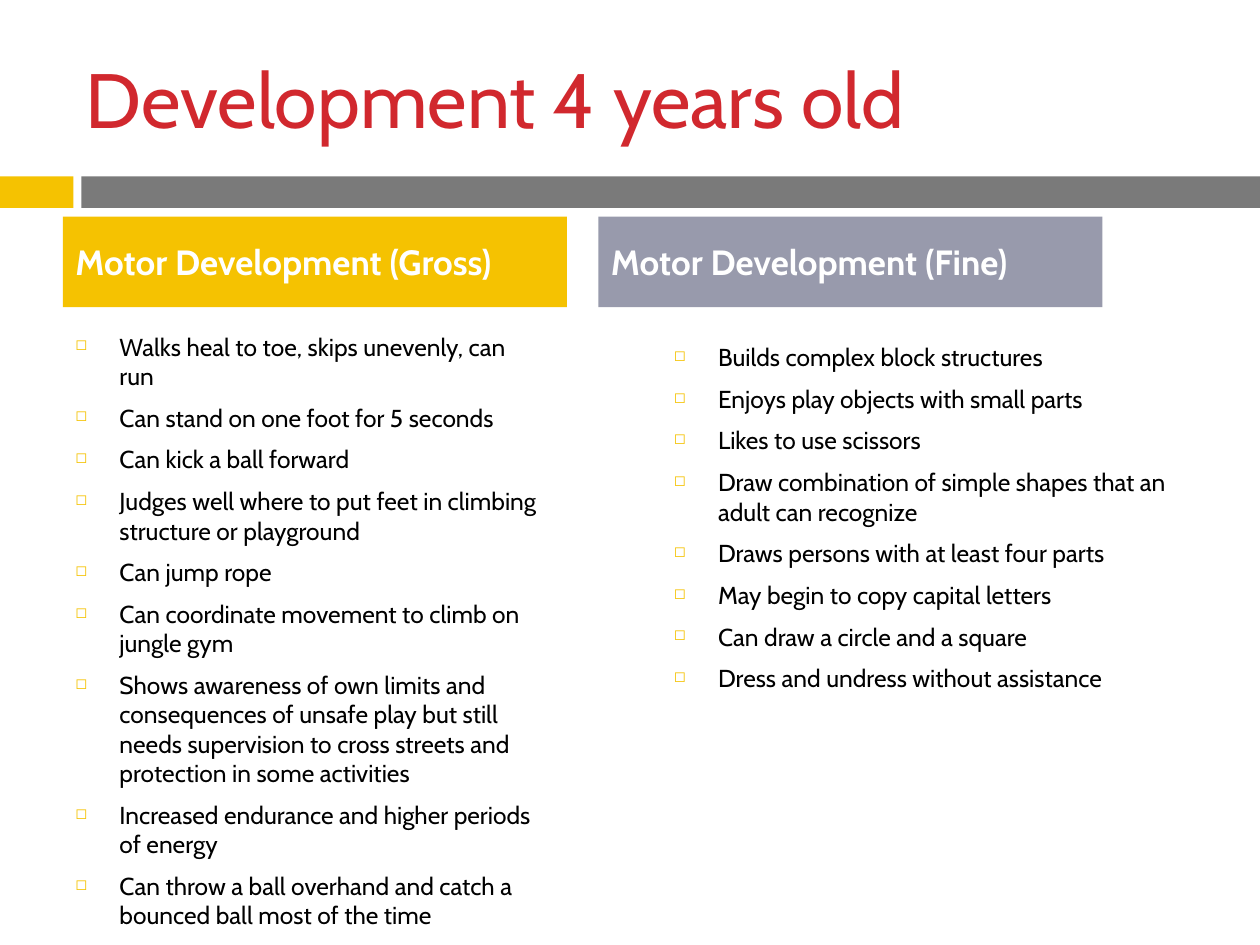
from lxml.etree import SubElement
from pptx import Presentation
from pptx.dml.color import RGBColor
from pptx.enum.shapes import MSO_SHAPE as Shape
from pptx.enum.text import MSO_ANCHOR as Anchor, PP_ALIGN as Align
from pptx.oxml.ns import qn
from pptx.util import Pt

RED, YELLOW, GRAY, LILAC = "D1282E", "F5C201", "7A7A7A", "989AAC"
BLACK, WHITE = "000000", "FFFFFF"

GROSS_SKILLS = [
    "Walks heal to toe, skips unevenly, can run",
    "Can stand on one foot for 5 seconds",
    "Can kick a ball forward",
    "Judges well where to put feet in climbing structure or playground",
    "Can jump rope",
    "Can coordinate movement to climb on jungle gym",
    "Shows awareness of own limits and consequences of unsafe play but still "
    "needs supervision to cross streets and protection in some activities",
    "Increased endurance and higher periods of energy",
    "Can throw a ball overhand and catch a bounced ball most of the time",
]
FINE_SKILLS = [
    "Builds complex block structures",
    "Enjoys play objects with small parts",
    "Likes to use scissors",
    "Draw combination of simple shapes that an adult can recognize",
    "Draws persons with at least four parts",
    "May begin to copy capital letters",
    "Can draw a circle and a square",
    "Dress and undress without assistance",
]


def color(value):
    return RGBColor.from_string(value)


class SlideBuilder:
    """Holds the text style and the slide being filled."""

    font_name = "Cabin"
    bullet_indent = 25.2
    space_before = 7

    def __init__(self, slide):
        self.slide = slide

    def style(self, paragraph, size, text_color, bold=False):
        paragraph.alignment = Align.LEFT
        font = paragraph.font
        font.name, font.size, font.bold = self.font_name, Pt(size), bold
        font.color.rgb = color(text_color)

    def bar(self, left, top, width, height, fill):
        shape = self.slide.shapes.add_shape(
            Shape.RECTANGLE, Pt(left), Pt(top), Pt(width), Pt(height))
        shape.shadow.inherit = False
        shape.fill.solid()
        shape.fill.fore_color.rgb = color(fill)
        shape.line.fill.background()
        return shape

    def heading(self, left, top, width, height, fill, text):
        frame = self.bar(left, top, width, height, fill).text_frame
        frame.vertical_anchor = Anchor.MIDDLE
        frame.text = text
        self.style(frame.paragraphs[0], 20, WHITE, bold=True)

    def text_frame(self, left, top, width, height):
        box = self.slide.shapes.add_textbox(
            Pt(left), Pt(top), Pt(width), Pt(height))
        box.text_frame.word_wrap = True
        return box.text_frame

    def title(self, left, top, width, height, text):
        frame = self.text_frame(left, top, width, height)
        frame.vertical_anchor = Anchor.MIDDLE
        frame.text = text
        self.style(frame.paragraphs[0], 44, RED)

    def add_bullet(self, paragraph):
        properties = paragraph._p.get_or_add_pPr()
        properties.set("marL", str(Pt(self.bullet_indent)))
        properties.set("indent", str(-Pt(self.bullet_indent)))
        bullet_color = SubElement(properties, qn("a:buClr"))
        SubElement(bullet_color, qn("a:srgbClr"), val=YELLOW)
        SubElement(properties, qn("a:buSzPct"), val="60000")
        SubElement(properties, qn("a:buChar"), char="◻")

    def bullet_list(self, left, top, width, height, items):
        frame = self.text_frame(left, top, width, height)
        frame.text = "\n".join(items)
        for paragraph in frame.paragraphs:
            paragraph.space_before = Pt(self.space_before)
            self.add_bullet(paragraph)
            self.style(paragraph, 14, BLACK)


def main():
    presentation = Presentation()
    presentation.slide_width, presentation.slide_height = Pt(720), Pt(540)
    builder = SlideBuilder(
        presentation.slides.add_slide(presentation.slide_layouts[6]))

    builder.bar(0, 100.8, 42, 18, YELLOW)
    builder.bar(46.5, 100.8, 673.5, 18, GRAY)
    builder.title(42, 21.6, 642, 68.4, "Development 4 years old")
    builder.bullet_list(36, 186, 282, 354, GROSS_SKILLS)
    builder.bullet_list(378, 192, 306, 282, FINE_SKILLS)
    builder.heading(36, 123.75, 288, 51.75, YELLOW, "Motor Development (Gross)")
    builder.heading(342, 123.75, 288, 51.75, LILAC, "Motor Development (Fine)")

    presentation.save("out.pptx")


if __name__ == "__main__":
    main()
